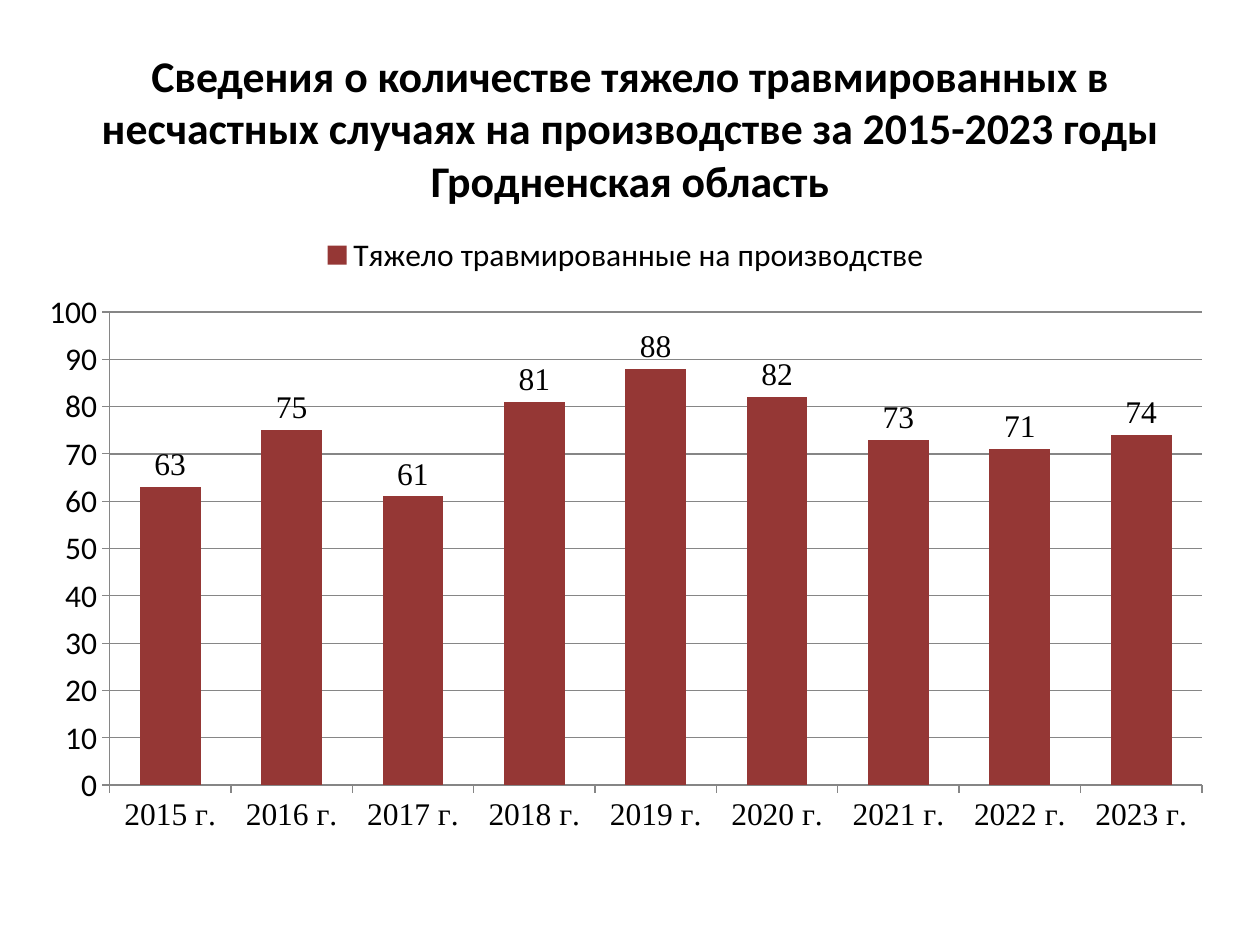
from pptx import Presentation
from pptx.chart.data import CategoryChartData
from pptx.dml.color import RGBColor
from pptx.enum.chart import XL_CHART_TYPE, XL_LABEL_POSITION, XL_LEGEND_POSITION, XL_TICK_MARK
from pptx.enum.text import MSO_ANCHOR, MSO_AUTO_SIZE, PP_ALIGN
from pptx.util import Inches, Pt

COLUMNS = XL_CHART_TYPE.COLUMN_CLUSTERED
LABEL_ABOVE = XL_LABEL_POSITION.OUTSIDE_END
LEGEND_TOP = XL_LEGEND_POSITION.TOP
TICK_OUT = XL_TICK_MARK.OUTSIDE
TICK_NONE = XL_TICK_MARK.NONE
MIDDLE = MSO_ANCHOR.MIDDLE
NO_AUTOFIT = MSO_AUTO_SIZE.NONE
CENTER = PP_ALIGN.CENTER

BLACK = RGBColor(0x00, 0x00, 0x00)
DARK_RED = RGBColor(0x95, 0x37, 0x35)
GRAY = RGBColor(0x86, 0x86, 0x86)
SANS = "Calibri"
SERIF = "Times New Roman"

TITLE = ("Сведения о количестве тяжело травмированных в несчастных случаях "
         "на производстве за 2015-2023 годы\vГродненская область")
SERIES_NAME = "Тяжело травмированные на производстве"
INJURED = [63, 75, 61, 81, 88, 82, 73, 71, 74]
FIRST_YEAR = 2015


def set_font(font, name, size, bold=False):
    font.name = name
    font.size = Pt(size)
    font.bold = bold
    font.color.rgb = BLACK


def place_title(slide, left, top, width, height):
    title = slide.shapes.title
    title.left, title.top, title.width, title.height = left, top, width, height
    tf = title.text_frame
    tf.text = TITLE
    tf.word_wrap = True
    tf.auto_size = NO_AUTOFIT
    tf.vertical_anchor = MIDDLE
    p = tf.paragraphs[0]
    p.alignment = CENTER
    set_font(p.font, SANS, 25, bold=True)


def add_injury_chart(slide, left, top, width, height):
    data = CategoryChartData()
    data.categories = [f"{FIRST_YEAR + i} г." for i in range(len(INJURED))]
    data.add_series(SERIES_NAME, INJURED)
    chart = slide.shapes.add_chart(COLUMNS, left, top, width, height, data).chart
    set_font(chart.font, SANS, 18)
    chart.has_title = False

    # Legend
    chart.has_legend = True
    chart.legend.position = LEGEND_TOP
    chart.legend.include_in_layout = False

    # Axes
    for axis, font_name in ((chart.category_axis, SERIF), (chart.value_axis, SANS)):
        axis.major_tick_mark = TICK_OUT
        axis.minor_tick_mark = TICK_NONE
        axis.format.line.color.rgb = GRAY
        set_font(axis.tick_labels.font, font_name, 18)
    value_axis = chart.value_axis
    value_axis.minimum_scale = 0
    value_axis.maximum_scale = 100
    value_axis.major_unit = 10
    value_axis.has_major_gridlines = True
    value_axis.major_gridlines.format.line.color.rgb = GRAY

    # Columns and their values
    plot = chart.plots[0]
    plot.gap_width = 100
    plot.vary_by_categories = False
    series = plot.series[0]
    series.format.fill.solid()
    series.format.fill.fore_color.rgb = DARK_RED
    labels = series.data_labels
    labels.show_value = True
    labels.position = LABEL_ABOVE
    set_font(labels.font, SERIF, 18)


def main():
    prs = Presentation()
    prs.slide_width, prs.slide_height = Inches(10), Inches(7.5)
    slide = prs.slides.add_slide(prs.slide_layouts[5])
    place_title(slide, Inches(0.5), Inches(0.3), Inches(9), Inches(1.42))
    add_injury_chart(slide, Inches(0.2), Inches(1.75), Inches(9.53), Inches(4.95))
    prs.save("out.pptx")


if __name__ == "__main__":
    main()
